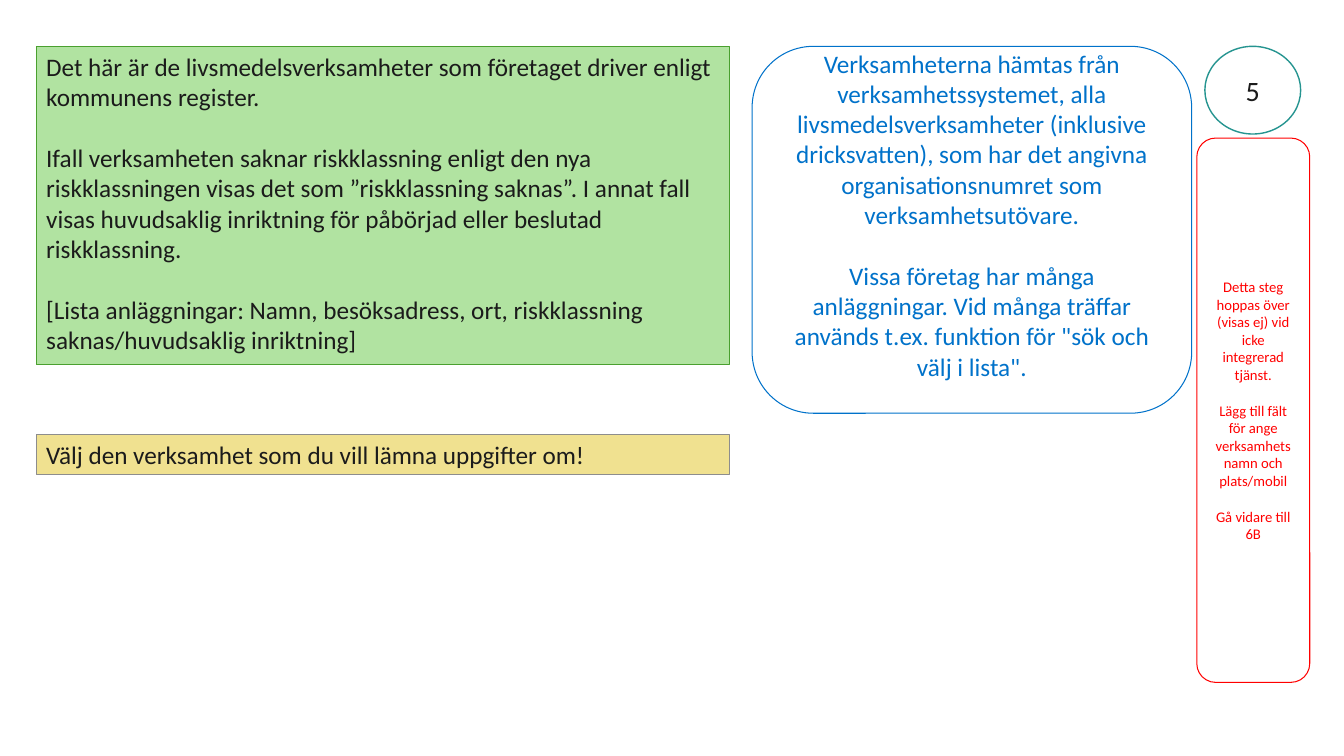
import pptx
import pptx.dml.color
import pptx.enum.shapes
import pptx.enum.text
import pptx.util

Inches = pptx.util.Inches
Pt = pptx.util.Pt
Shape = pptx.enum.shapes.MSO_SHAPE
Align = pptx.enum.text.PP_ALIGN
Anchor = pptx.enum.text.MSO_ANCHOR

HUES = {
    "ink": "1B1B1B", "white": "FFFFFF", "teal": "259490",
    "green": "B1E3A1", "leaf": "4AA02F", "sand": "F0E190",
    "gray": "8D8D8D", "blue": "0072CA", "red": "FF0000",
}
LEFT, TOP, WIDE = 0.36, 0.46, 6.87


def hue(name):
    return pptx.dml.color.RGBColor.from_string(HUES[name])


def panel(slide, kind, box, fill, line, weight):
    shape = slide.shapes.add_shape(kind, *map(Inches, box))
    shape.shadow.inherit = False
    if fill:
        shape.fill.solid()
        shape.fill.fore_color.rgb = hue(fill)
    else:
        shape.fill.background()
    shape.line.color.rgb = hue(line)
    shape.line.width = Pt(weight)
    return shape


def write(shape, texts, size, color, align, anchor):
    frame = shape.text_frame
    frame.word_wrap = True
    frame.vertical_anchor = anchor
    frame.text = "\n".join(texts)
    for index, para in enumerate(frame.paragraphs):
        para.alignment = align
        if index:
            para.space_before = Pt(round(size * 1.22, 1))
        for run in para.runs:
            run.font.name = "Calibri"
            run.font.size = Pt(size)
            run.font.color.rgb = hue(color)


def block(slide, box, fill, line, texts):
    shape = panel(slide, Shape.RECTANGLE, box, fill, line, 0.5)
    write(shape, texts, 18, "ink", Align.LEFT, Anchor.TOP)


def note(slide, box, color, size, texts, foot=0.05):
    shape = panel(slide, Shape.ROUNDED_RECTANGLE, box, None, color, 0.75)
    shape.text_frame.margin_bottom = Inches(foot)
    write(shape, texts, size, color, Align.CENTER, Anchor.MIDDLE)


def badge(slide, box, text):
    shape = panel(slide, Shape.OVAL, box, "white", "teal", 1)
    write(shape, [text], 20, "ink", Align.CENTER, Anchor.MIDDLE)


def main():
    deck = pptx.Presentation()
    deck.slide_width = Inches(13.33)
    deck.slide_height = Inches(7.5)
    slide = deck.slides.add_slide(deck.slide_layouts[6])

    block(slide, (LEFT, TOP, WIDE, 3.16), "green", "leaf", [
        "Det här är de livsmedelsverksamheter som företaget driver enligt "
        "kommunens register.",
        "Ifall verksamheten saknar riskklassning enligt den nya "
        "riskklassningen visas det som ”riskklassning saknas”. I annat fall "
        "visas huvudsaklig inriktning för påbörjad eller beslutad "
        "riskklassning.",
        "[Lista anläggningar: Namn, besöksadress, ort, riskklassning "
        "saknas/huvudsaklig inriktning]",
    ])
    note(slide, (7.46, TOP, 4.36, 3.64), "blue", 18, [
        "Verksamheterna hämtas från verksamhetssystemet, alla "
        "livsmedelsverksamheter (inklusive dricksvatten), som har det "
        "angivna organisationsnumret som verksamhetsutövare.",
        "Vissa företag har många anläggningar. Vid många träffar används "
        "t.ex. funktion för \"sök och välj i lista\".",
    ], foot=0.35)
    badge(slide, (11.95, TOP, 0.95, 0.87), "5")
    block(slide, (LEFT, 4.31, WIDE, 0.4), "sand", "gray", [
        "Välj den verksamhet som du vill lämna uppgifter om!",
    ])
    note(slide, (11.87, 1.37, 1.12, 5.4), "red", 10.5, [
        "Detta steg hoppas över (visas ej) vid icke integrerad tjänst.",
        "Lägg till fält för ange verksamhetsnamn och plats/mobil",
        "Gå vidare till 6B",
    ])
    deck.save("out.pptx")


if __name__ == "__main__":
    main()
